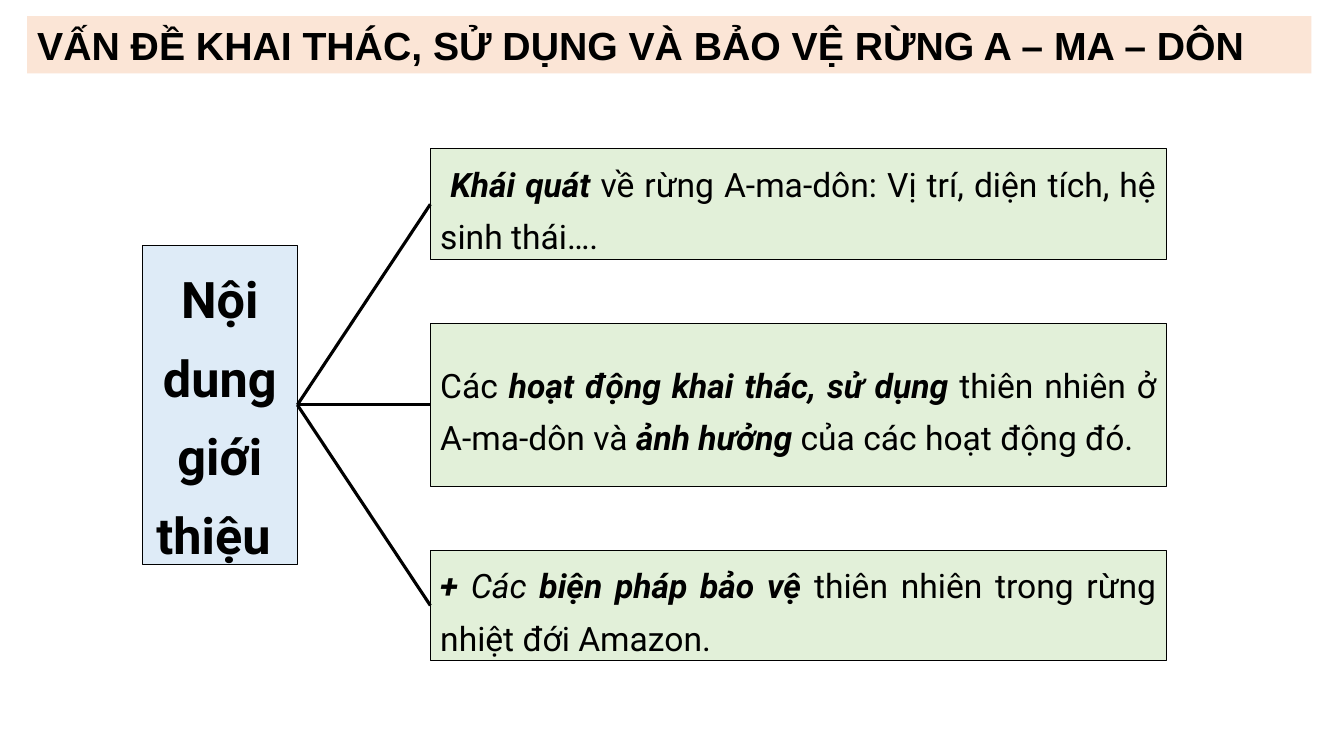
from lxml import etree
from pptx import Presentation
from pptx.dml.color import RGBColor
from pptx.enum import shapes, text
from pptx.oxml import ns
from pptx.util import Pt

# Content: each branch is (height, [(words, bold, italic), ...])
TITLE = "VẤN ĐỀ KHAI THÁC, SỬ DỤNG VÀ BẢO VỆ RỪNG A – MA – DÔN"
ROOT = [("Nội dung giới thiệu ", True, False)]
BRANCHES = [
    (79.2, [
        (" ", False, False),
        ("Khái quát ", True, True),
        ("về rừng A-ma-dôn: Vị trí, diện tích, hệ sinh thái…. ", False, False),
    ]),
    (116.6, [
        ("Các ", False, False),
        ("hoạt động khai thác, sử dụng ", True, True),
        ("thiên nhiên ở A-ma-dôn và ", False, False),
        ("ảnh hưởng ", True, True),
        ("của các hoạt động đó.", False, False),
    ]),
    (79.2, [
        ("+ ", True, True),
        ("Các", False, True),
        (" biện pháp bảo vệ ", True, True),
        ("thiên nhiên trong rừng nhiệt đới Amazon.", False, False),
    ]),
]

BLACK = RGBColor(0x00, 0x00, 0x00)
PEACH = RGBColor(0xFB, 0xE5, 0xD6)
BLUE = RGBColor(0xDE, 0xEB, 0xF7)
GREEN = RGBColor(0xE2, 0xF0, 0xD9)

# Layout in points
CENTRE_Y = 289.2
ROOT_LEFT, ROOT_WIDTH, ROOT_HEIGHT = 101.6, 110.8, 228.2
BRANCH_LEFT, BRANCH_WIDTH, BRANCH_GAP = 307.4, 525.6, 45.4


def style_run(span, font, size, bold, italic=False):
    span.font.name = font
    span.font.size = Pt(size)
    span.font.bold = bold
    span.font.italic = italic
    span.font.color.rgb = BLACK


def add_box(page, place, fill, spans, size, align, anchor):
    box = page.shapes.add_shape(shapes.MSO_SHAPE.RECTANGLE, *map(Pt, place))
    box.shadow.inherit = False
    box.fill.solid()
    box.fill.fore_color.rgb = fill
    box.line.color.rgb = BLACK
    box.line.width = Pt(0.75)
    frame = box.text_frame
    frame.word_wrap = True
    frame.auto_size = text.MSO_AUTO_SIZE.SHAPE_TO_FIT_TEXT
    frame.vertical_anchor = anchor
    para = frame.paragraphs[0]
    para.alignment = align
    para.line_spacing = 1.3
    for words, bold, italic in spans:
        span = para.add_run()
        span.text = words
        style_run(span, "Roboto", size, bold, italic)
    return box


def join(page, start, end):
    line = page.shapes.add_connector(shapes.MSO_CONNECTOR.STRAIGHT, 0, 0, 0, 0)
    line.begin_connect(start, 3)
    line.end_connect(end, 1)
    line.line.color.rgb = BLACK
    line.line.width = Pt(2.25)
    etree.SubElement(line._element.spPr, ns.qn("a:effectLst"))


def main():
    deck = Presentation()
    deck.slide_width, deck.slide_height = Pt(960), Pt(540)
    page = deck.slides.add_slide(deck.slide_layouts[5])

    # Title band
    title = page.shapes.title
    title.left, title.top, title.width, title.height = map(Pt, (19.4, 11.5, 917.3, 41))
    title.fill.solid()
    title.fill.fore_color.rgb = PEACH
    frame = title.text_frame
    frame.text = TITLE
    frame.word_wrap = True
    frame.auto_size = text.MSO_AUTO_SIZE.NONE
    frame.vertical_anchor = text.MSO_ANCHOR.TOP
    frame.paragraphs[0].alignment = text.PP_ALIGN.LEFT
    style_run(frame.paragraphs[0].runs[0], "Arial", 28, True)

    # Root box, centred on the branches
    root = add_box(page, (ROOT_LEFT, CENTRE_Y - ROOT_HEIGHT / 2, ROOT_WIDTH, ROOT_HEIGHT),
                   BLUE, ROOT, 36, text.PP_ALIGN.CENTER, text.MSO_ANCHOR.TOP)

    # Branch boxes, stacked with equal gaps and joined to the root
    total = sum(height for height, _ in BRANCHES) + BRANCH_GAP * (len(BRANCHES) - 1)
    top = CENTRE_Y - total / 2
    for height, spans in BRANCHES:
        branch = add_box(page, (BRANCH_LEFT, top, BRANCH_WIDTH, height),
                         GREEN, spans, 24, text.PP_ALIGN.JUSTIFY, text.MSO_ANCHOR.MIDDLE)
        join(page, root, branch)
        top += height + BRANCH_GAP

    deck.save("out.pptx")


if __name__ == "__main__":
    main()
